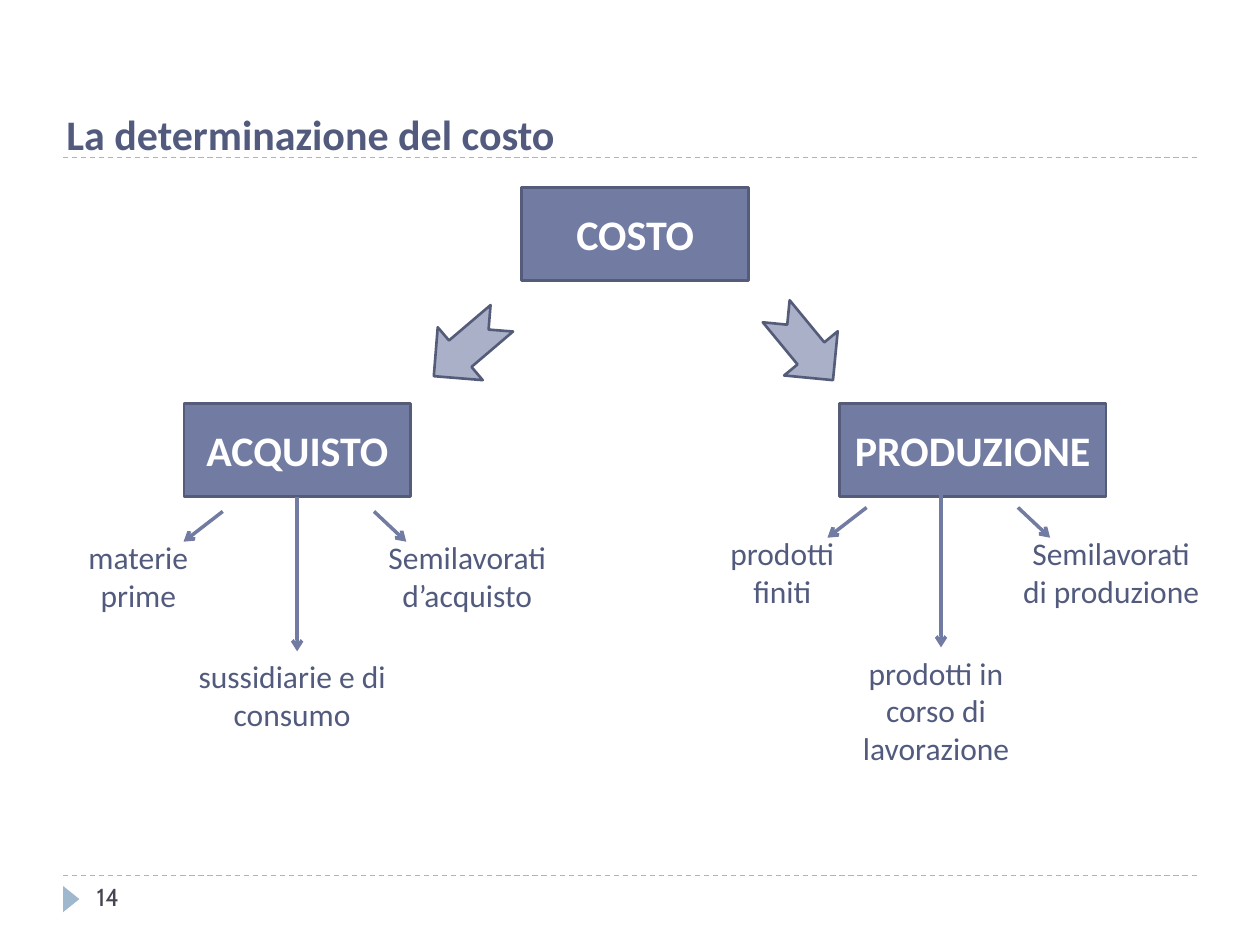
from dataclasses import dataclass

from lxml.etree import SubElement
from pptx import Presentation
from pptx.dml.color import RGBColor
from pptx.enum.dml import MSO_LINE_DASH_STYLE as Dash
from pptx.enum.shapes import MSO_CONNECTOR as Connector, MSO_SHAPE as Shape
from pptx.enum.text import MSO_ANCHOR as Anchor, PP_ALIGN as Align
from pptx.oxml.ns import qn
from pptx.util import Cm, Pt


@dataclass(frozen=True)
class Theme:
    text: str = "525B7E"
    box: str = "727CA3"
    outline: str = "545C79"
    block_arrow: str = "AAB0C8"
    rule: str = "9FB8CD"
    number: str = "464653"
    white: str = "FFFFFF"
    font: str = "Calibri"
    number_font: str = "Cabin"
    heading_size: int = 24
    label_size: int = 18
    number_size: int = 14


THEME = Theme()
HEADING = {"size": Pt(THEME.heading_size), "name": THEME.font, "bold": True}
LABEL = {"size": Pt(THEME.label_size), "name": THEME.font}
NUMBER = {"size": Pt(THEME.number_size), "name": THEME.number_font}


def set_attributes(target, values):
    for name, value in values.items():
        setattr(target, name, value)


def write_text(shape, text, color, font_values, align=Align.LEFT, anchor=Anchor.TOP):
    set_attributes(shape.text_frame, {"word_wrap": True, "vertical_anchor": anchor})
    paragraph = shape.text_frame.paragraphs[0]
    paragraph.alignment = align
    run = paragraph.add_run()
    run.text = text
    set_attributes(run.font, font_values)
    run.font.color.rgb = RGBColor.from_string(color)


def add_text(slide, frame, text, color, font_values, align=Align.LEFT):
    shape = slide.shapes.add_textbox(*map(Cm, frame))
    write_text(shape, text, color, font_values, align)


def add_filled_shape(slide, kind, frame, fill, outline=None, rotation=0):
    shape = slide.shapes.add_shape(kind, *map(Cm, frame))
    shape.shadow.inherit = False
    shape.rotation = rotation
    shape.fill.solid()
    shape.fill.fore_color.rgb = RGBColor.from_string(fill)
    if outline:
        shape.line.color.rgb = RGBColor.from_string(outline)
        shape.line.width = Pt(1.5)
    else:
        shape.line.fill.background()
    return shape


def add_line(slide, start, end, color, line_values, arrow=False):
    line = slide.shapes.add_connector(Connector.STRAIGHT, *map(Cm, (*start, *end)))
    line.line.color.rgb = RGBColor.from_string(color)
    set_attributes(line.line, line_values)
    if arrow:
        SubElement(line.line._get_or_add_ln(), qn("a:tailEnd"), type="arrow")
    SubElement(line._element.spPr, qn("a:effectLst"))


def add_frame(slide, title, number):
    for y in (3.18, 17.65):
        add_line(slide, (1.27, y), (24.13, y), THEME.rule,
                 {"width": Pt(0.75), "dash_style": Dash.DASH})
    add_filled_shape(slide, Shape.ISOSCELES_TRIANGLE, (1.17, 17.96, 0.53, 0.33),
                     THEME.rule, rotation=90)
    add_text(slide, (1.09, 2.06, 22.63, 1.27), title, THEME.text, HEADING)
    add_text(slide, (1.7, 17.65, 5.51, 1.02), number, THEME.number, NUMBER)


def add_box(slide, text, left, top, width=4.57):
    box = add_filled_shape(slide, Shape.RECTANGLE, (left, top, width, 1.88),
                           THEME.box, THEME.outline)
    write_text(box, text, THEME.white, HEADING, Align.CENTER, Anchor.MIDDLE)


def add_block_arrow(slide, left, top, rotation):
    add_filled_shape(slide, Shape.NOTCHED_RIGHT_ARROW, (left, top, 1.8, 1.4),
                     THEME.block_arrow, THEME.outline, rotation)


def add_branch(slide, x, y, labels):
    arrows = [((-1.5, 0.3), (-2.29, 0.91)), ((0, 0), (0, 3.12)), ((1.55, 0.3), (2.2, 0.91))]
    for (start_x, start_y), (end_x, end_y) in arrows:
        add_line(slide, (x + start_x, y + start_y), (x + end_x, y + end_y),
                 THEME.box, {"width": Pt(2)}, arrow=True)
    places = [(-3.2, 0.71, 3.4), (-0.1, 3.12, 4.39), (3.43, 0.72, 4.19)]
    for text, (center, top, width) in zip(labels, places):
        add_text(slide, (x + center - width / 2, y + top, width, 1.8),
                 text, THEME.text, LABEL, Align.CENTER)


def main():
    presentation = Presentation()
    set_attributes(presentation, {"slide_width": Cm(25.4), "slide_height": Cm(19.05)})
    slide = presentation.slides.add_slide(presentation.slide_layouts[6])
    add_frame(slide, "La determinazione del costo", "14")
    add_box(slide, "COSTO", 10.52, 3.78)
    add_box(slide, "ACQUISTO", 3.71, 8.13)
    add_box(slide, "PRODUZIONE", 16.92, 8.13, 5.38)
    add_block_arrow(slide, 8.53, 6.3, 139.6)
    add_block_arrow(slide, 15.32, 6.27, 50.5)
    add_branch(slide, 5.99, 10.01,
               ["materie prime", "sussidiarie e di consumo", "Semilavorati d’acquisto"])
    add_branch(slide, 18.97, 9.93,
               ["prodotti finiti", "prodotti in corso di lavorazione",
                "Semilavorati di produzione"])
    presentation.save("out.pptx")


if __name__ == "__main__":
    main()
